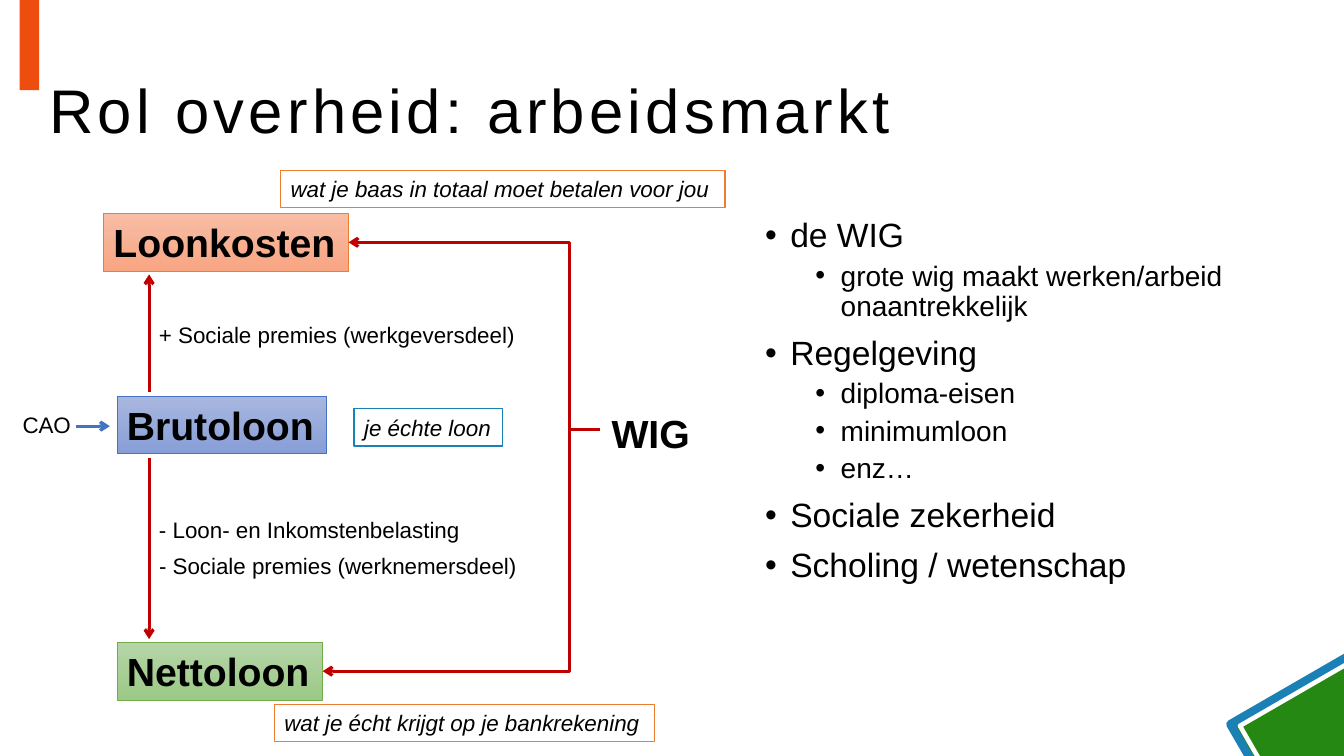
from dataclasses import dataclass

import pptx
import pptx.dml.color
import pptx.enum.shapes
import pptx.enum.text
import pptx.oxml
import pptx.oxml.ns
import pptx.util

Pt = pptx.util.Pt
qn = pptx.oxml.ns.qn
RECTANGLE = pptx.enum.shapes.MSO_SHAPE.RECTANGLE
CONNECTOR = pptx.enum.shapes.MSO_CONNECTOR


@dataclass(frozen=True)
class Theme:
    font: str = "Arial"
    text: str = "000000"
    white: str = "FFFFFF"
    green: str = "258812"
    teal: str = "1A80B6"
    red_orange: str = "ED4D0F"
    orange: str = "ED7D31"
    blue: str = "4472C4"
    leaf: str = "70AD47"
    red: str = "C00000"
    orange_gradient: tuple = ("F7BDA5", "F8A582")
    blue_gradient: tuple = ("A8B7DF", "889ED7")
    leaf_gradient: tuple = ("B5D5A7", "9CC987")
    title_size: int = 44
    wage_size: int = 28
    label_size: int = 16
    list_sizes: tuple = (24, 20)
    arrow_width: float = 2.25


THEME = Theme()

TOPICS = [
    (0, "de WIG"),
    (1, "grote wig maakt werken/arbeid onaantrekkelijk"),
    (0, "Regelgeving"),
    (1, "diploma-eisen"),
    (1, "minimumloon"),
    (1, "enz…"),
    (0, "Sociale zekerheid"),
    (0, "Scholing / wetenschap"),
]


def rgb(color):
    return pptx.dml.color.RGBColor.from_string(color)


def points(*lengths):
    return [Pt(length) for length in lengths]


def place(shape, left, top, width, height):
    shape.left, shape.top, shape.width, shape.height = points(left, top, width, height)


def format_runs(paragraph, size, bold=False, italic=False):
    for run in paragraph.runs:
        run.font.name = THEME.font
        run.font.size = Pt(size)
        run.font.bold = bold
        run.font.italic = italic
        run.font.color.rgb = rgb(THEME.text)


def set_label(shape, text, size, bold=False, italic=False):
    frame = shape.text_frame
    frame.text = text
    frame.word_wrap = False
    frame.auto_size = pptx.enum.text.MSO_AUTO_SIZE.SHAPE_TO_FIT_TEXT
    frame.vertical_anchor = pptx.enum.text.MSO_ANCHOR.TOP
    paragraph = frame.paragraphs[0]
    paragraph.alignment = pptx.enum.text.PP_ALIGN.LEFT
    format_runs(paragraph, size, bold, italic)


def add_box(slide, box, fill=None, line=None, line_width=1, rotation=0):
    shape = slide.shapes.add_shape(RECTANGLE, *points(*box))
    shape.shadow.inherit = False
    shape.rotation = rotation
    if fill:
        shape.fill.solid()
        shape.fill.fore_color.rgb = rgb(fill)
    else:
        shape.fill.background()
    if line:
        shape.line.color.rgb = rgb(line)
        shape.line.width = Pt(line_width)
    else:
        shape.line.fill.background()
    return shape


def add_wage(slide, text, box, gradient, line):
    shape = add_box(slide, box, line=line, line_width=0.5)
    shape.fill.gradient()
    shape.fill.gradient_angle = 270
    for stop, color in zip(shape.fill.gradient_stops, gradient):
        stop.color.rgb = rgb(color)
    set_label(shape, text, THEME.wage_size, bold=True)
    return shape


def add_note(slide, text, box, line):
    shape = add_box(slide, box, fill=THEME.white, line=line)
    set_label(shape, text, THEME.label_size, italic=True)


def add_label(slide, text, box, size=THEME.label_size, bold=False):
    set_label(slide.shapes.add_textbox(*points(*box)), text, size, bold)


def add_line(slide, ends, color, arrows=("tailEnd",), kind=CONNECTOR.STRAIGHT):
    connector = slide.shapes.add_connector(kind, *points(*ends))
    connector.line.color.rgb = rgb(color)
    connector.line.width = Pt(THEME.arrow_width)
    properties = connector._element.spPr
    outline = properties.find(qn("a:ln"))
    for arrow in arrows:
        pptx.oxml.ns.nsdecls("a")
        end = outline.makeelement(qn(f"a:{arrow}"), {"type": "arrow"})
        outline.append(end)
    properties.append(properties.makeelement(qn("a:effectLst"), {}))
    return connector


def add_bracket(slide, upper, lower, reach):
    start, finish = upper.left + upper.width, lower.left + lower.width
    connector = add_line(slide, (249, 173, 230, 480), THEME.red,
                         ("headEnd", "tailEnd"), CONNECTOR.ELBOW)
    connector.begin_connect(upper, 3)
    connector.end_connect(lower, 3)
    bend = round((start - Pt(reach)) / (start - finish) * 100000)
    geometry = connector._element.spPr.find(qn("a:prstGeom"))
    adjustments = geometry.find(qn("a:avLst"))
    adjustments.append(adjustments.makeelement(
        qn("a:gd"), {"name": "adj1", "fmla": f"val {bend}"}))


def add_decoration(slide):
    add_box(slide, (898.6, 483.1, 108, 108), THEME.green, THEME.teal, 6, 60)
    add_box(slide, (903.6, 487.4, 98, 98), None, THEME.white, 3.25, 60)
    add_box(slide, (14, -18, 14, 82.5), THEME.red_orange)


def fill_title(title, text):
    place(title, 28, 29, 906, 104)
    frame = title.text_frame
    frame.text = text
    frame.auto_size = pptx.enum.text.MSO_AUTO_SIZE.NONE
    frame.vertical_anchor = pptx.enum.text.MSO_ANCHOR.MIDDLE
    paragraph = frame.paragraphs[0]
    paragraph.alignment = pptx.enum.text.PP_ALIGN.LEFT
    paragraph.line_spacing = 0.9
    format_runs(paragraph, THEME.title_size)
    for run in paragraph.runs:
        run.font._element.set("spc", "300")


def fill_list(body, topics):
    place(body, 539.3, 152.6, 411, 358.6)
    frame = body.text_frame
    frame.text = "\n".join(text for level, text in topics)
    frame.auto_size = pptx.enum.text.MSO_AUTO_SIZE.NONE
    for paragraph, (level, text) in zip(frame.paragraphs, topics):
        paragraph.level = level
        paragraph.line_spacing = 0.9
        paragraph.space_before = Pt((10, 5)[level])
        format_runs(paragraph, THEME.list_sizes[level])
        properties = paragraph._element.get_or_add_pPr()
        properties.set("marL", str(Pt(18 + 36 * level)))
        properties.set("indent", str(Pt(-18)))
        for tag, name, value in (("a:buFont", "typeface", THEME.font),
                                 ("a:buChar", "char", "•")):
            properties.append(properties.makeelement(qn(tag), {name: value}))


def main():
    presentation = pptx.Presentation()
    presentation.slide_width, presentation.slide_height = points(960, 540)
    slide = presentation.slides.add_slide(presentation.slide_layouts[1])
    add_decoration(slide)
    fill_title(slide.shapes.title, "Rol overheid: arbeidsmarkt")
    fill_list(slide.placeholders[1], TOPICS)

    labour_cost = add_wage(slide, "Loonkosten", (74, 152.5, 175, 41.2),
                           THEME.orange_gradient, THEME.orange)
    add_wage(slide, "Brutoloon", (83.5, 283, 149.8, 41.2), THEME.blue_gradient, THEME.blue)
    net_wage = add_wage(slide, "Nettoloon", (83.5, 458.8, 147, 41.2),
                        THEME.leaf_gradient, THEME.leaf)

    add_line(slide, (54, 304.4, 78.5, 304.4), THEME.blue)
    add_line(slide, (106.5, 280, 106.5, 196), THEME.red)
    add_line(slide, (106.5, 327, 106.5, 456.5), THEME.red)
    add_line(slide, (407, 306.7, 428.5, 306.7), THEME.red, ())
    add_bracket(slide, labour_cost, net_wage, 407)

    add_label(slide, "CAO", (9, 290.4, 50, 26.6))
    add_label(slide, "+ Sociale premies (werkgeversdeel)", (106.5, 226.2, 271.5, 26.6))
    add_label(slide, "- Loon- en Inkomstenbelasting", (106.5, 364.8, 232, 26.6))
    add_label(slide, "- Sociale premies (werknemersdeel)", (106.5, 391.2, 273, 26.6))
    add_label(slide, "WIG", (429.7, 289, 71.3, 41.2), THEME.wage_size, True)

    add_note(slide, "je échte loon", (253, 292, 106, 26.6), THEME.teal)
    add_note(slide, "wat je écht krijgt op je bankrekening", (196, 503.3, 271.5, 26.6), THEME.orange)
    add_note(slide, "wat je baas in totaal moet betalen voor jou", (200.5, 121.8, 317.3, 26.6),
             THEME.orange)
    presentation.save("out.pptx")


if __name__ == "__main__":
    main()
